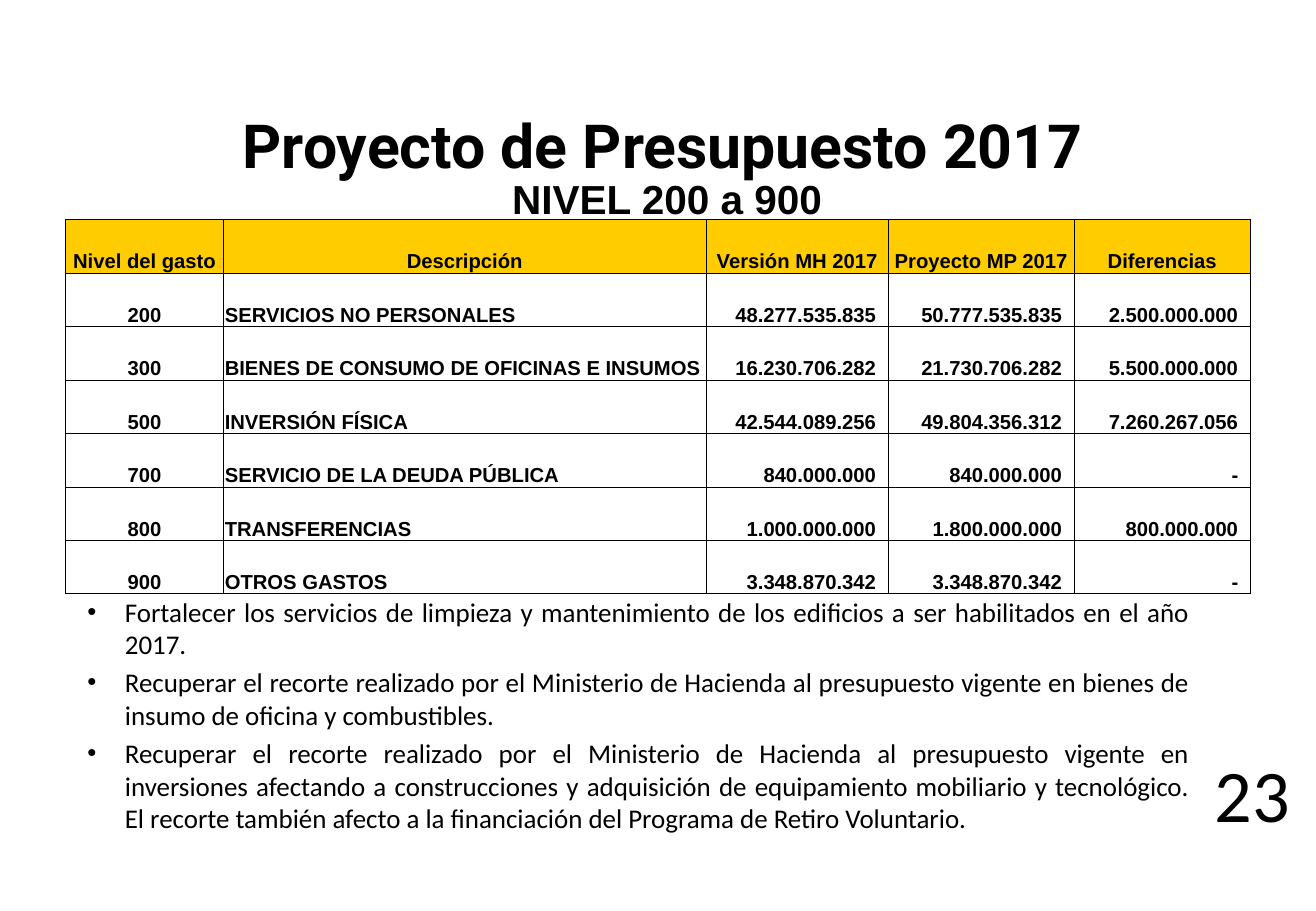
from lxml import etree
from pptx import Presentation
from pptx.dml.color import RGBColor
from pptx.enum import shapes, text
from pptx.oxml import ns
from pptx.util import Inches, Pt

COLORS = {"ink": "000000", "header": "FFCC00", "cell": "FFFFFF"}
LEFT, CENTER, RIGHT, JUSTIFY = (
    text.PP_ALIGN.LEFT, text.PP_ALIGN.CENTER, text.PP_ALIGN.RIGHT, text.PP_ALIGN.JUSTIFY)
TOP, MIDDLE, BOTTOM = (
    text.MSO_ANCHOR.TOP, text.MSO_ANCHOR.MIDDLE, text.MSO_ANCHOR.BOTTOM)

COLUMN_WIDTHS = [1.3, 3.97, 1.5, 1.53, 1.45]
COLUMN_ALIGNS = [CENTER, LEFT, RIGHT, RIGHT, RIGHT]
ROW_HEIGHT = 0.44
BUDGET = [
    ["Nivel del gasto", "Descripción", "Versión MH 2017", "Proyecto MP 2017", "Diferencias"],
    ["200", "SERVICIOS NO PERSONALES", "48.277.535.835", "50.777.535.835", "2.500.000.000"],
    ["300", "BIENES DE CONSUMO DE OFICINAS E INSUMOS", "16.230.706.282", "21.730.706.282",
     "5.500.000.000"],
    ["500", "INVERSIÓN FÍSICA", "42.544.089.256", "49.804.356.312", "7.260.267.056"],
    ["700", "SERVICIO DE LA DEUDA PÚBLICA", "840.000.000", "840.000.000", "-"],
    ["800", "TRANSFERENCIAS", "1.000.000.000", "1.800.000.000", "800.000.000"],
    ["900", "OTROS GASTOS", "3.348.870.342", "3.348.870.342", "-"],
]
GOALS = [
    "Fortalecer los servicios de limpieza y mantenimiento de los edificios a ser habilitados "
    "en el año 2017.",
    "Recuperar el recorte realizado por el Ministerio de Hacienda al presupuesto vigente en "
    "bienes de insumo de oficina y combustibles.",
    "Recuperar el recorte realizado por el Ministerio de Hacienda al presupuesto vigente en "
    "inversiones afectando a construcciones y adquisición de equipamiento mobiliario y "
    "tecnológico. El recorte también afecto a la financiación del Programa de Retiro Voluntario.",
]


def rgb(name):
    return RGBColor.from_string(COLORS[name])


def add_bullet(p):
    pPr = p._p.get_or_add_pPr()
    pPr.set("marL", str(Inches(0.31)))
    pPr.set("indent", str(-Inches(0.31)))
    color = etree.SubElement(pPr, ns.qn("a:buClr"))
    etree.SubElement(color, ns.qn("a:srgbClr"), val=COLORS["ink"])
    etree.SubElement(pPr, ns.qn("a:buSzPct"), val="95000")
    etree.SubElement(pPr, ns.qn("a:buFont"), typeface="Arial")
    etree.SubElement(pPr, ns.qn("a:buChar"), char="•")


def write(tf, lines, size, font, bold=False, align=LEFT, anchor=TOP,
          margins=(0.1, 0.05, 0.1, 0.05), bullets=False, gap=0):
    """Fill a text frame with one paragraph per line."""
    tf.word_wrap = True
    tf.vertical_anchor = anchor
    tf.margin_left, tf.margin_top, tf.margin_right, tf.margin_bottom = map(Inches, margins)
    for i, line in enumerate(lines):
        p = tf.paragraphs[0] if i == 0 else tf.add_paragraph()
        p.alignment = align
        p.space_before = Pt(gap if i else 0)
        if bullets:
            add_bullet(p)
        r = p.add_run()
        r.text = line
        r.font.name, r.font.size, r.font.bold = font, Pt(size), bold
        r.font.color.rgb = rgb("ink")


def add_title(s, line, x, y, w, h):
    sp = s.shapes.title
    sp.left, sp.top, sp.width, sp.height = map(Inches, (x, y, w, h))
    write(sp.text_frame, [line], 36, "Roboto", bold=True, align=CENTER)


def add_text(s, lines, x, y, w, h, **style):
    sp = s.shapes.add_textbox(*map(Inches, (x, y, w, h)))
    write(sp.text_frame, lines, **style)


def add_page_number(s, number, x, y, w, h):
    sp = s.shapes.add_shape(shapes.MSO_SHAPE.ROUNDED_RECTANGLE, *map(Inches, (x, y, w, h)))
    sp.shadow.inherit = False
    sp.fill.background()
    sp.line.fill.background()
    write(sp.text_frame, [number], 44, "Calibri", align=RIGHT, anchor=MIDDLE)


def set_borders(cell):
    tcPr = cell._tc.get_or_add_tcPr()
    for i, side in enumerate(("lnL", "lnR", "lnT", "lnB")):
        ln = etree.Element(ns.qn(f"a:{side}"), w=str(Pt(0.5)))
        fill = etree.SubElement(ln, ns.qn("a:solidFill"))
        etree.SubElement(fill, ns.qn("a:srgbClr"), val=COLORS["ink"])
        tcPr.insert(i, ln)


def add_budget_table(s, x, y):
    table = s.shapes.add_table(
        len(BUDGET), len(COLUMN_WIDTHS), Inches(x), Inches(y),
        Inches(sum(COLUMN_WIDTHS)), Inches(ROW_HEIGHT * len(BUDGET))).table
    for column, width in zip(table.columns, COLUMN_WIDTHS):
        column.width = Inches(width)
    for i, values in enumerate(BUDGET):
        table.rows[i].height = Inches(ROW_HEIGHT)
        for j, value in enumerate(values):
            cell = table.cell(i, j)
            align = COLUMN_ALIGNS[j] if i else CENTER
            right = 0.1 if align == RIGHT else 0.01
            write_cell(cell, value, align, right)
            cell.fill.solid()
            cell.fill.fore_color.rgb = rgb("cell" if i else "header")
            set_borders(cell)


def write_cell(cell, value, align, right):
    write(cell.text_frame, [value], 12, "Arial", bold=True, align=align)
    cell.vertical_anchor = BOTTOM
    cell.margin_left, cell.margin_top = Inches(0.01), Inches(0.01)
    cell.margin_right, cell.margin_bottom = Inches(right), 0


def main():
    prs = Presentation()
    prs.slide_width, prs.slide_height = Inches(10.83), Inches(7.5)
    s = prs.slides.add_slide(prs.slide_layouts[5])

    # Heading
    add_title(s, "Proyecto de Presupuesto 2017", 1.01, 0.84, 8.89, 0.71)
    add_text(s, ["NIVEL 200 a 900"], 0.1, 1.38, 10.78, 0.51,
             size=24, font="Arial", bold=True, align=CENTER)

    # Budget by spending level
    add_budget_table(s, 0.54, 1.81)

    # Goals and page number
    add_text(s, GOALS, 0.62, 4.85, 9.27, 2.1, size=16, font="Calibri",
             align=JUSTIFY, bullets=True, gap=3.6)
    add_page_number(s, "23", 9.68, 6.19, 1.07, 0.68)

    prs.save("out.pptx")


if __name__ == "__main__":
    main()
